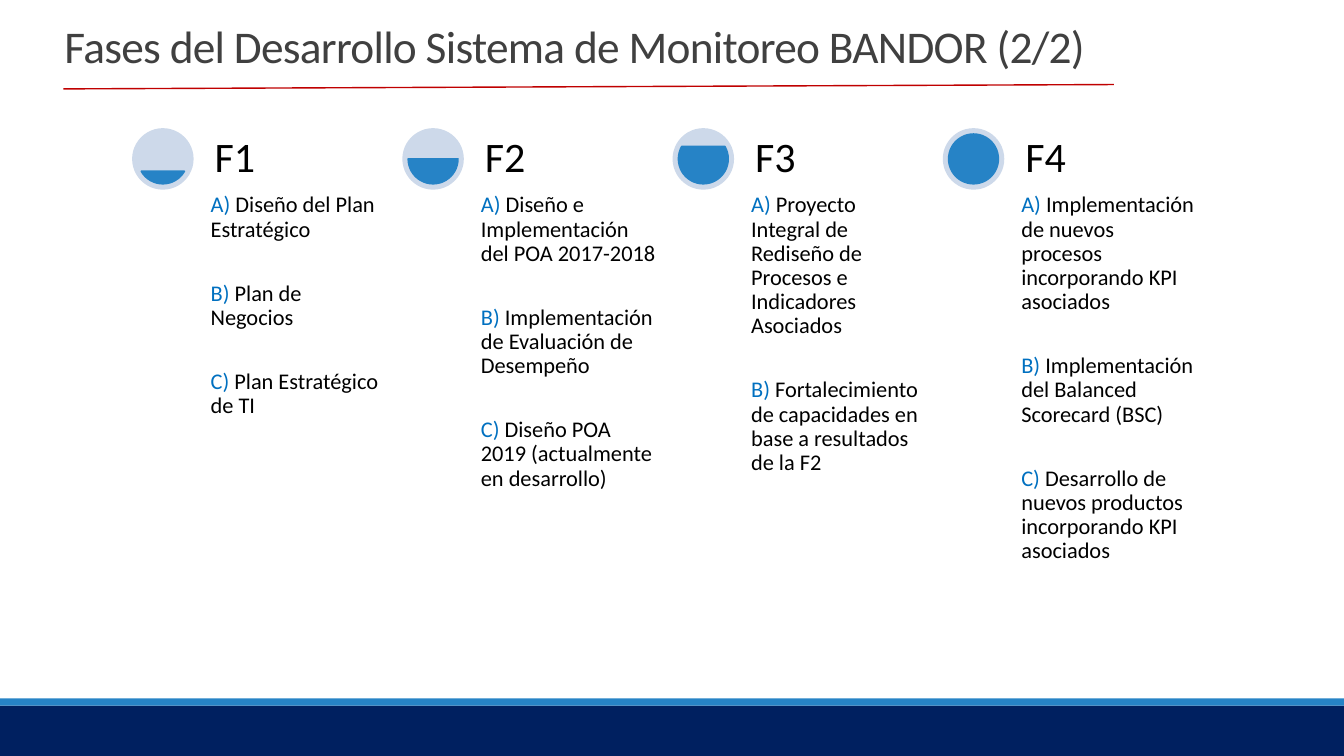
from math import asin, degrees

from pptx import Presentation
from pptx.dml.color import RGBColor
from pptx.enum import shapes, text
from pptx.oxml import parse_xml
from pptx.oxml.ns import nsdecls
from pptx.util import Cm, Pt

NAVY = RGBColor(0x00, 0x20, 0x60)
BLUE = RGBColor(0x26, 0x83, 0xC6)
PALE = RGBColor(0xCD, 0xD9, 0xEA)
RED = RGBColor(0xC0, 0x00, 0x00)
GREY = RGBColor(0x40, 0x40, 0x40)
MARK = RGBColor(0x00, 0x70, 0xC0)
BLACK = RGBColor(0x00, 0x00, 0x00)

WIDE, HIGH = 33.87, 19.05
LEFT, TOP, STEP = 3.33, 3.23, 6.81
DISC, RIM = 1.55, 0.15

PHASES = [
    ("F1", ["Diseño del Plan Estratégico",
            "Plan de Negocios",
            "Plan Estratégico de TI"]),
    ("F2", ["Diseño e Implementación del POA 2017-2018",
            "Implementación de Evaluación de Desempeño",
            "Diseño POA 2019 (actualmente en desarrollo)"]),
    ("F3", ["Proyecto Integral de Rediseño de Procesos e Indicadores Asociados",
            "Fortalecimiento de capacidades en base a resultados de la F2"]),
    ("F4", ["Implementación de nuevos procesos incorporando KPI asociados",
            "Implementación del Balanced Scorecard (BSC)",
            "Desarrollo de nuevos productos incorporando KPI asociados"]),
]


class Deck:
    font = "Calibri"

    def __init__(self):
        self.prs = Presentation()
        self.prs.slide_width, self.prs.slide_height = Cm(WIDE), Cm(HIGH)
        self.slide = self.prs.slides.add_slide(self.prs.slide_layouts[5])

    def style(self, run, size, color):
        run.font.name = self.font
        run.font.size = Pt(size)
        run.font.color.rgb = color

    def title(self, words, x, y, w, h):
        box = self.slide.shapes.title
        box.left, box.top, box.width, box.height = Cm(x), Cm(y), Cm(w), Cm(h)
        frame = box.text_frame
        frame.text = words
        frame.word_wrap = True
        frame.auto_size = text.MSO_AUTO_SIZE.NONE
        frame.vertical_anchor = text.MSO_ANCHOR.BOTTOM
        para = frame.paragraphs[0]
        para.alignment = text.PP_ALIGN.LEFT
        para.line_spacing = 0.85
        run = para.runs[0]
        self.style(run, 32.4, GREY)
        run.font._element.set("spc", "-50")

    def shape(self, kind, x, y, w, h, color, edge=None):
        item = self.slide.shapes.add_shape(kind, Cm(x), Cm(y), Cm(w), Cm(h))
        item.shadow.inherit = False
        item.fill.solid()
        item.fill.fore_color.rgb = color
        if edge:
            item.line.color.rgb = color
            item.line.width = Pt(edge)
        else:
            item.line.fill.background()
        return item

    def line(self, x1, y1, x2, y2, color):
        item = self.slide.shapes.add_connector(
            shapes.MSO_CONNECTOR.STRAIGHT, Cm(x1), Cm(y1), Cm(x2), Cm(y2))
        item.line.color.rgb = color
        item.line.width = Pt(1)
        item._element.spPr.append(parse_xml(f"<a:effectLst {nsdecls('a')}/>"))

    def gauge(self, x, y, level):
        """Draw a disc filled from the bottom up to level, from 0 to 1."""
        self.shape(shapes.MSO_SHAPE.OVAL, x, y, DISC, DISC, PALE)
        size = DISC - 2 * RIM
        fill = self.shape(shapes.MSO_SHAPE.CHORD, x + RIM, y + RIM, size, size, BLUE, 1.25)
        angle = degrees(asin(1 - 2 * level))
        # adjustments count in units of 100000, angles in 60000 per degree
        fill.adjustments[0] = angle % 360 * 0.6
        fill.adjustments[1] = (180 - angle) * 0.6

    def text(self, x, y, w, h, paras, size, inset, anchor, gap=0):
        """Add a text box; each paragraph is a list of (words, color) runs."""
        frame = self.slide.shapes.add_textbox(Cm(x), Cm(y), Cm(w), Cm(h)).text_frame
        frame.word_wrap = True
        frame.vertical_anchor = anchor
        frame.margin_left = frame.margin_right = Cm(inset)
        frame.margin_top = frame.margin_bottom = Cm(inset)
        for i, parts in enumerate(paras):
            para = frame.add_paragraph() if i else frame.paragraphs[0]
            para.line_spacing = 0.9
            if i:
                para.space_before = Pt(gap)
            for words, color in parts:
                run = para.add_run()
                run.text = words
                self.style(run, size, color)

    def phase(self, x, level, name, tasks):
        self.gauge(x, TOP, level)
        left, low = x + 1.88, TOP + DISC
        self.text(left, TOP, 4.6, DISC, [[(name, BLACK)]], 30, 0.2,
                  text.MSO_ANCHOR.BOTTOM)
        paras = [[(f"{mark}) ", MARK), (task, BLACK)]
                 for mark, task in zip("ABC", tasks)]
        self.text(left, low, 4.6, 6.55, paras, 16, 0.1, text.MSO_ANCHOR.TOP, 28.5)


def main():
    deck = Deck()
    rect = shapes.MSO_SHAPE.RECTANGLE
    deck.shape(rect, 0, 17.78, WIDE, 1.27, NAVY)
    deck.shape(rect, 0, 17.6, WIDE, 0.18, BLUE)
    deck.line(1.6, 2.24, 28.07, 2.13, RED)
    deck.title("Fases del Desarrollo Sistema de Monitoreo BANDOR (2/2)",
               1.37, 0.71, 26.67, 1.24)
    for i, (name, tasks) in enumerate(PHASES):
        deck.phase(LEFT + i * STEP, (i + 1) / len(PHASES), name, tasks)
    deck.prs.save("out.pptx")


if __name__ == "__main__":
    main()
